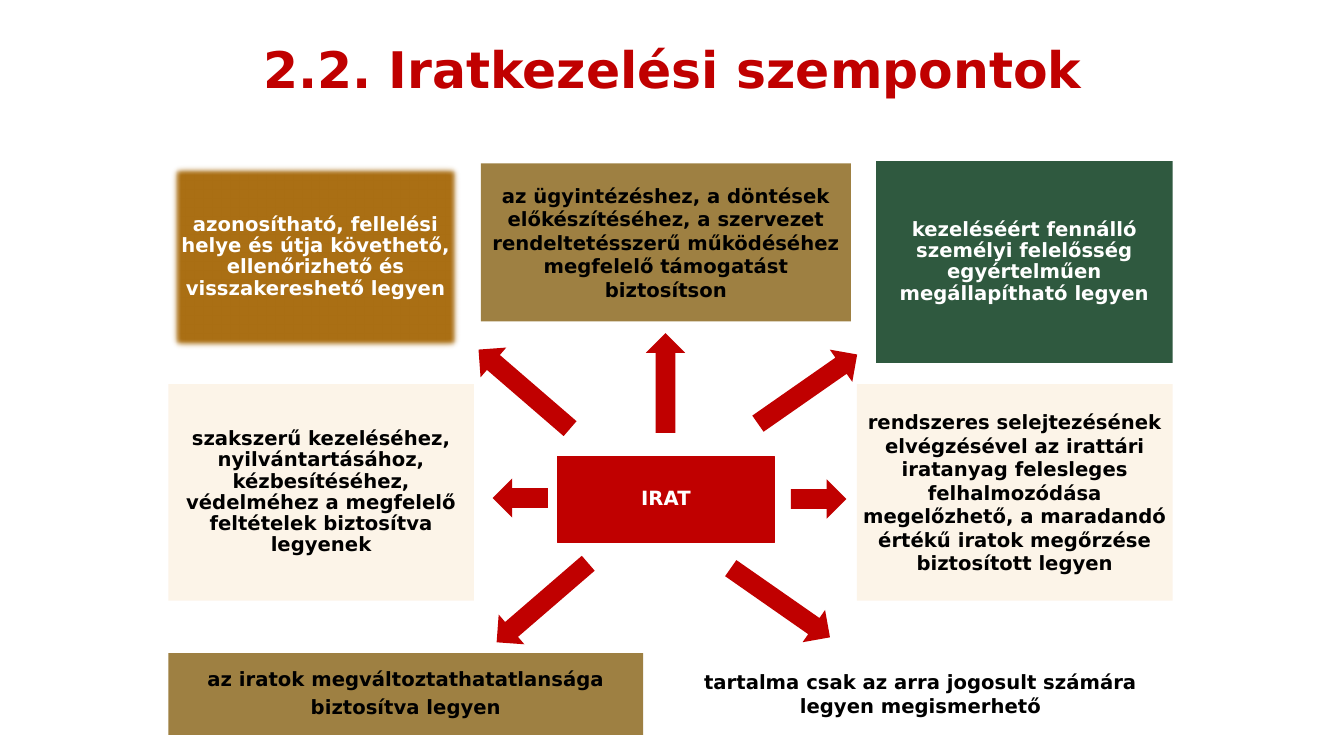
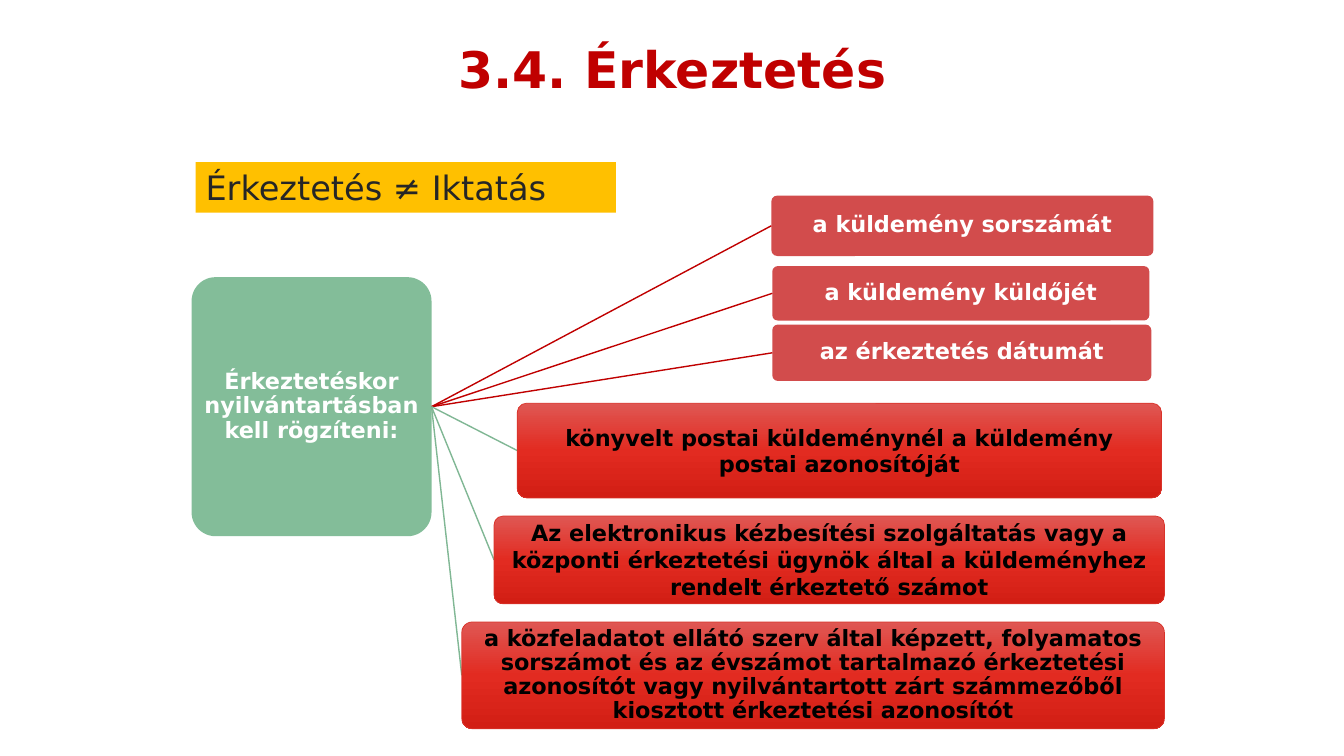
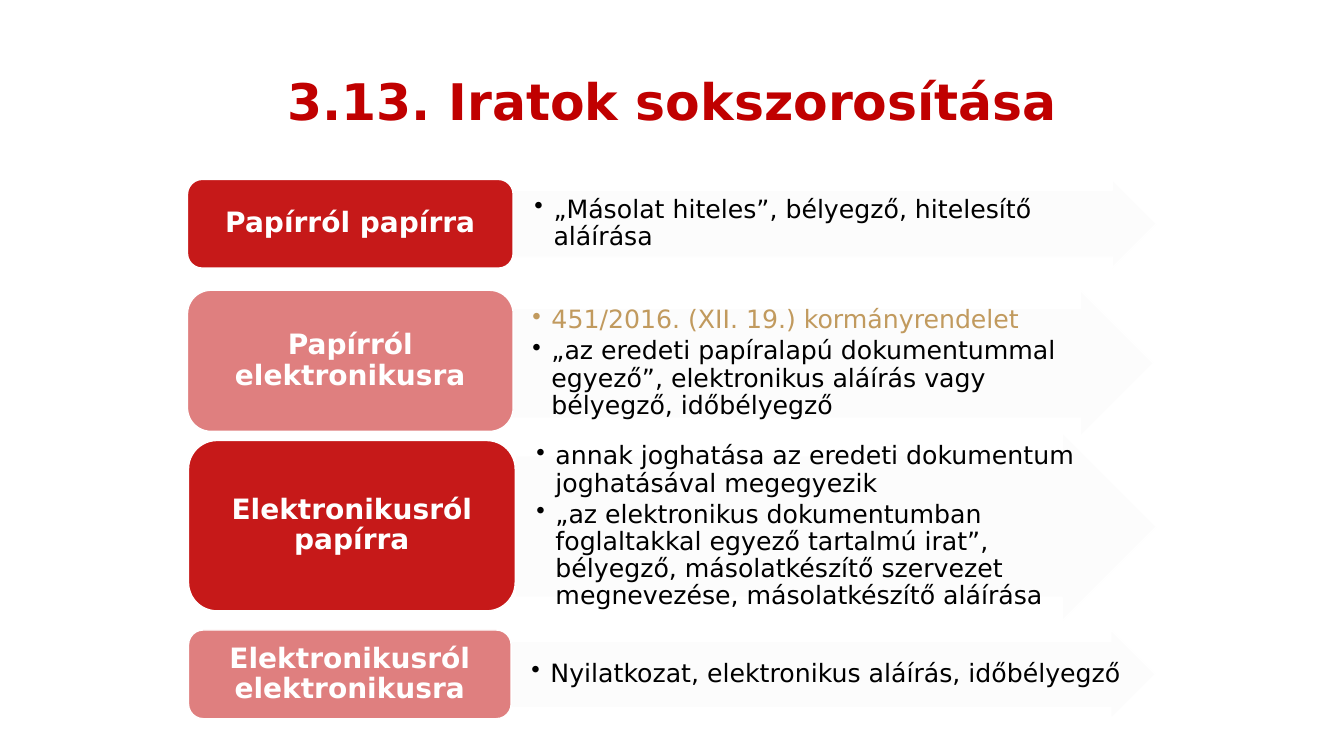
from lxml import etree
from pptx import Presentation
from pptx.dml.color import RGBColor
from pptx.enum.shapes import MSO_CONNECTOR as Connector, MSO_SHAPE as Shape
from pptx.enum.text import MSO_ANCHOR as Anchor, PP_ALIGN as Align
from pptx.oxml.ns import qn
from pptx.util import Inches, Pt

FONT = "DejaVu Sans"
COLORS = {
    "red": "C00000",
    "white": "FFFFFF",
    "black": "000000",
    "ink": "262626",
    "ochre": "AA6F14",
    "olive": "9E8042",
    "forest": "2F593F",
    "cream": "FCF4E8",
    "mint": "64AD80",
    "mint_line": "80B794",
    "amber": "FFC000",
    "pale": "FCFCFC",
    "gold": "C19A5E",
    "edge": "D9332A",
    "grad_top": "DF5753",
    "grad_middle": "E22B21",
    "grad_bottom": "D21E14",
}


def rgb(name):
    """Return the named colour."""
    return RGBColor.from_string(COLORS[name])


def inches(box):
    """Turn left, top, width and height into lengths."""
    return [Inches(value) for value in box]


def add_child(parent, tag, **attributes):
    """Append a drawing element to its parent."""
    child = etree.SubElement(parent, qn(tag))
    for key, value in attributes.items():
        child.set(key, str(value))
    return child


def set_alpha(shape, percent):
    """Make a solid fill partly transparent."""
    color = shape.fill._xPr.find(qn("a:solidFill"))[0]
    add_child(color, "a:alpha", val=percent * 1000)


def set_gradient(shape, names):
    """Fill a shape from top to bottom with evenly spaced colours."""
    shape.fill.gradient()
    gradient = shape.fill._xPr.find(qn("a:gradFill"))
    stops = gradient.find(qn("a:gsLst"))
    for stop in list(stops):
        stops.remove(stop)
    for index, name in enumerate(names):
        position = 100000 * index // (len(names) - 1)
        stop = add_child(stops, "a:gs", pos=position)
        add_child(stop, "a:srgbClr", val=COLORS[name])
    shape.fill.gradient_angle = 270


def soften_edge(shape, radius):
    """Blur the outline of a shape."""
    effects = shape._element.spPr.find(qn("a:effectLst"))
    add_child(effects, "a:softEdge", rad=Pt(radius))


def add_block(slide, kind, box, fill=None, alpha=None, line=None, width=1, adjust=None):
    """Place a flat preset shape."""
    shape = slide.shapes.add_shape(kind, *inches(box))
    shape.shadow.inherit = False
    if fill:
        shape.fill.solid()
        shape.fill.fore_color.rgb = rgb(fill)
    if alpha:
        set_alpha(shape, alpha)
    if line:
        shape.line.color.rgb = rgb(line)
        shape.line.width = Pt(width)
    else:
        shape.line.fill.background()
    if adjust is not None:
        shape.adjustments[0] = adjust
    return shape


def add_bullet(paragraph):
    """Give a paragraph a hanging bullet."""
    properties = paragraph._p.get_or_add_pPr()
    properties.set("marL", str(Inches(0.39)))
    properties.set("indent", str(Inches(-0.19)))
    add_child(properties, "a:buChar", char="•")


def write(shape, lines, size, color, bold=True, align=Align.CENTER, spacing=0.9,
          after=0.35, inset=(0.01, 0.01), bullet=False):
    """Write (text, colour) pairs or plain strings as paragraphs."""
    frame = shape.text_frame
    frame.word_wrap = True
    frame.vertical_anchor = Anchor.MIDDLE
    frame.margin_left = frame.margin_right = Inches(inset[0])
    frame.margin_top = frame.margin_bottom = Inches(inset[1])
    for index, line in enumerate(lines):
        text, line_color = (line, color) if isinstance(line, str) else line
        paragraph = frame.add_paragraph() if index else frame.paragraphs[0]
        if bullet:
            add_bullet(paragraph)
        paragraph.alignment = align
        paragraph.line_spacing = spacing
        paragraph.space_after = Pt(round(size * after, 1))
        run = paragraph.add_run()
        run.text = text
        run.font.name = FONT
        run.font.size = Pt(size)
        run.font.bold = bold
        run.font.color.rgb = rgb(line_color)


def add_titled_slide(presentation, title, top=0):
    """Add a blank slide with the shared red title."""
    slide = presentation.slides.add_slide(presentation.slide_layouts[6])
    title_box = slide.shapes.add_textbox(*inches((1.67, top, 10, 1.43)))
    write(title_box, [title], 36, "red", after=0, inset=(0.1, 0.05))
    return slide


def add_card(slide, box, fill, color, lines, tight=True, line=None):
    """Place one requirement card."""
    card = add_block(slide, Shape.RECTANGLE, box, fill, line=line, width=0.75)
    spacing, after = (0.9, 0.35) if tight else (1, 0)
    write(card, lines, 14, color, spacing=spacing, after=after, inset=(0.06, 0.06))
    return card


def add_arrow(slide, center, length, rotation):
    """Place a red arrow turned around its centre."""
    height = 0.39
    box = (center[0] - length / 2, center[1] - height / 2, length, height)
    arrow = add_block(slide, Shape.RIGHT_ARROW, box, "red")
    arrow.rotation = rotation


def build_requirements(presentation):
    """Show the record surrounded by its handling requirements."""
    slide = add_titled_slide(presentation, "2.2. Iratkezelési szempontok")
    blurred = add_card(slide, (1.67, 1.61, 2.92, 1.88), "ochre", "white", [
        "azonosítható, fellelési helye és útja követhető, ellenőrizhető és "
        "visszakereshető legyen"])
    soften_edge(blurred, 5)
    cards = [
        ((4.77, 1.62, 3.67, 1.57), "olive", "black", [
            "az ügyintézéshez, a döntések előkészítéséhez, a szervezet "
            "rendeltetésszerű működéséhez megfelelő támogatást biztosítson"], False),
        ((8.69, 1.6, 2.94, 2), "forest", "white", [
            "kezeléséért fennálló személyi felelősség egyértelműen "
            "megállapítható legyen"], True),
        ((1.67, 3.81, 3.03, 2.15), "cream", "black", [
            "szakszerű kezeléséhez, nyilvántartásához, kézbesítéséhez, "
            "védelméhez a megfelelő feltételek biztosítva legyenek"], True),
        ((8.5, 3.81, 3.13, 2.15), "cream", "black", [
            "rendszeres selejtezésének elvégzésével az irattári iratanyag "
            "felesleges felhalmozódása megelőzhető, a maradandó értékű iratok "
            "megőrzése biztosított legyen"], False),
        ((1.67, 6.48, 4.71, 0.81), "olive", "black", [
            "az iratok megváltoztathatatlansága", "biztosítva legyen"], True),
        ((6.63, 6.46, 5, 0.84), "white", "black", [
            "tartalma csak az arra jogosult számára", "legyen megismerhető"], False),
    ]
    for card in cards:
        add_card(slide, *card)
    add_card(slide, (5.53, 4.53, 2.15, 0.85), "red", "white", ["IRAT"], line="red")
    arrows = [
        ((8.12, 4.95), 0.55, 0),
        ((5.16, 4.94), 0.55, 180),
        ((6.6, 3.8), 0.99, 270),
        ((8.01, 3.86), 1.2, 325.1),
        ((5.2, 3.86), 1.2, 220.8),
        ((7.74, 5.98), 1.2, 34.9),
        ((5.38, 5.98), 1.2, 139.2),
    ]
    for arrow in arrows:
        add_arrow(slide, *arrow)


def add_branch(slide, start, box, color):
    """Draw a line from the root to the left side of a branch box."""
    end = (box[0], box[1] + box[3] / 2)
    branch = slide.shapes.add_connector(Connector.STRAIGHT, *inches(start + end))
    branch.line.color.rgb = rgb(color)
    branch.line.width = Pt(1)
    add_child(branch._element.spPr, "a:effectLst")


def add_short_item(slide, start, box, text):
    """Place a translucent item with its branch."""
    add_branch(slide, start, box, "red")
    item = add_block(slide, Shape.ROUNDED_RECTANGLE, box, "red", 70, adjust=0.1)
    write(item, [text], 16, "white")


def add_long_item(slide, start, box, lines, tight):
    """Place a gradient item with its branch."""
    add_branch(slide, start, box, "mint_line")
    item = add_block(slide, Shape.ROUNDED_RECTANGLE, box, line="edge", width=0.5, adjust=0.1)
    set_gradient(item, ["grad_top", "grad_middle", "grad_bottom"])
    spacing, after = (0.9, 0.35) if tight else (1, 0)
    write(item, lines, 16, "black", spacing=spacing, after=after)


def build_registration(presentation):
    """Show what is recorded on arrival as a tree."""
    slide = add_titled_slide(presentation, "3.4. Érkeztetés")
    root_box = (1.9, 2.75, 2.38, 2.57)
    root = add_block(slide, Shape.ROUNDED_RECTANGLE, root_box, "mint", 80, adjust=0.1)
    write(root, ["Érkeztetéskor nyilvántartásban kell rögzíteni:"], 16, "white")
    start = (root_box[0] + root_box[2], root_box[1] + root_box[3] / 2)
    short_items = [
        ((7.65, 1.94, 3.79, 0.6), "a küldemény sorszámát"),
        ((7.66, 2.64, 3.74, 0.54), "a küldemény küldőjét"),
        ((7.66, 3.22, 3.76, 0.56), "az érkeztetés dátumát"),
    ]
    for box, text in short_items:
        add_short_item(slide, start, box, text)
    long_items = [
        ((5.13, 4, 6.39, 0.94), [
            "könyvelt postai küldeménynél a küldemény", "postai azonosítóját"], False),
        ((4.9, 5.12, 6.65, 0.87), [
            "Az elektronikus kézbesítési szolgáltatás vagy a központi érkeztetési "
            "ügynök által a küldeményhez rendelt érkeztető számot"], False),
        ((4.58, 6.17, 6.97, 1.06), [
            "a közfeladatot ellátó szerv által képzett, folyamatos sorszámot és az "
            "évszámot tartalmazó érkeztetési azonosítót vagy nyilvántartott zárt "
            "számmezőből kiosztott érkeztetési azonosítót"], True),
    ]
    for box, lines, tight in long_items:
        add_long_item(slide, start, box, lines, tight)
    banner = add_block(slide, Shape.RECTANGLE, (1.94, 1.61, 4.17, 0.5), "amber")
    write(banner, ["Érkeztetés ≠ Iktatás"], 24, "ink", bold=False, align=Align.LEFT,
          spacing=1, after=0, inset=(0.1, 0.05))


def add_copy_row(slide, label_box, arrow_box, alpha, label, lines):
    """Place a label with the arrow that lists its conditions."""
    arrow = add_block(slide, Shape.RIGHT_ARROW, arrow_box, "pale", 90, "white", adjust=0.75)
    write(arrow, lines, 18, "black", bold=False, align=Align.LEFT, after=0.15, bullet=True)
    tag = add_block(slide, Shape.ROUNDED_RECTANGLE, label_box, "red", alpha, "white")
    write(tag, [label], 20, "white", inset=(0.08, 0.04))


def build_copying(presentation):
    """List the four kinds of copying."""
    slide = add_titled_slide(presentation, "3.13. Iratok sokszorosítása", 0.32)
    rows = [
        ((1.86, 1.78, 3.23, 0.88), (5.09, 1.78, 6.38, 0.88), "Papírról papírra", [
            "„Másolat hiteles”, bélyegző, hitelesítő aláírása"]),
        ((1.86, 2.88, 3.23, 1.4), (5.07, 2.88, 6.37, 1.45), "Papírról elektronikusra", [
            ("451/2016. (XII. 19.) kormányrendelet", "gold"),
            "„az eredeti papíralapú dokumentummal egyező”, elektronikus aláírás "
            "vagy bélyegző, időbélyegző"]),
        ((1.87, 4.37, 3.24, 1.69), (5.11, 4.29, 6.36, 1.87), "Elektronikusról papírra", [
            "annak joghatása az eredeti dokumentum joghatásával megegyezik",
            "„az elektronikus dokumentumban foglaltakkal egyező tartalmú irat”, "
            "bélyegző, másolatkészítő szervezet megnevezése, másolatkészítő aláírása"]),
        ((1.87, 6.25, 3.2, 0.88), (5.06, 6.25, 6.4, 0.88), "Elektronikusról elektronikusra", [
            "Nyilatkozat, elektronikus aláírás, időbélyegző"]),
    ]
    for index, (label_box, arrow_box, label, lines) in enumerate(rows):
        alpha = 50 if index % 2 else 90
        add_copy_row(slide, label_box, arrow_box, alpha, label, lines)


def main():
    """Build and save the presentation."""
    presentation = Presentation()
    presentation.slide_width = Inches(13.33)
    presentation.slide_height = Inches(7.5)
    build_requirements(presentation)
    build_registration(presentation)
    build_copying(presentation)
    presentation.save("out.pptx")


if __name__ == "__main__":
    main()
